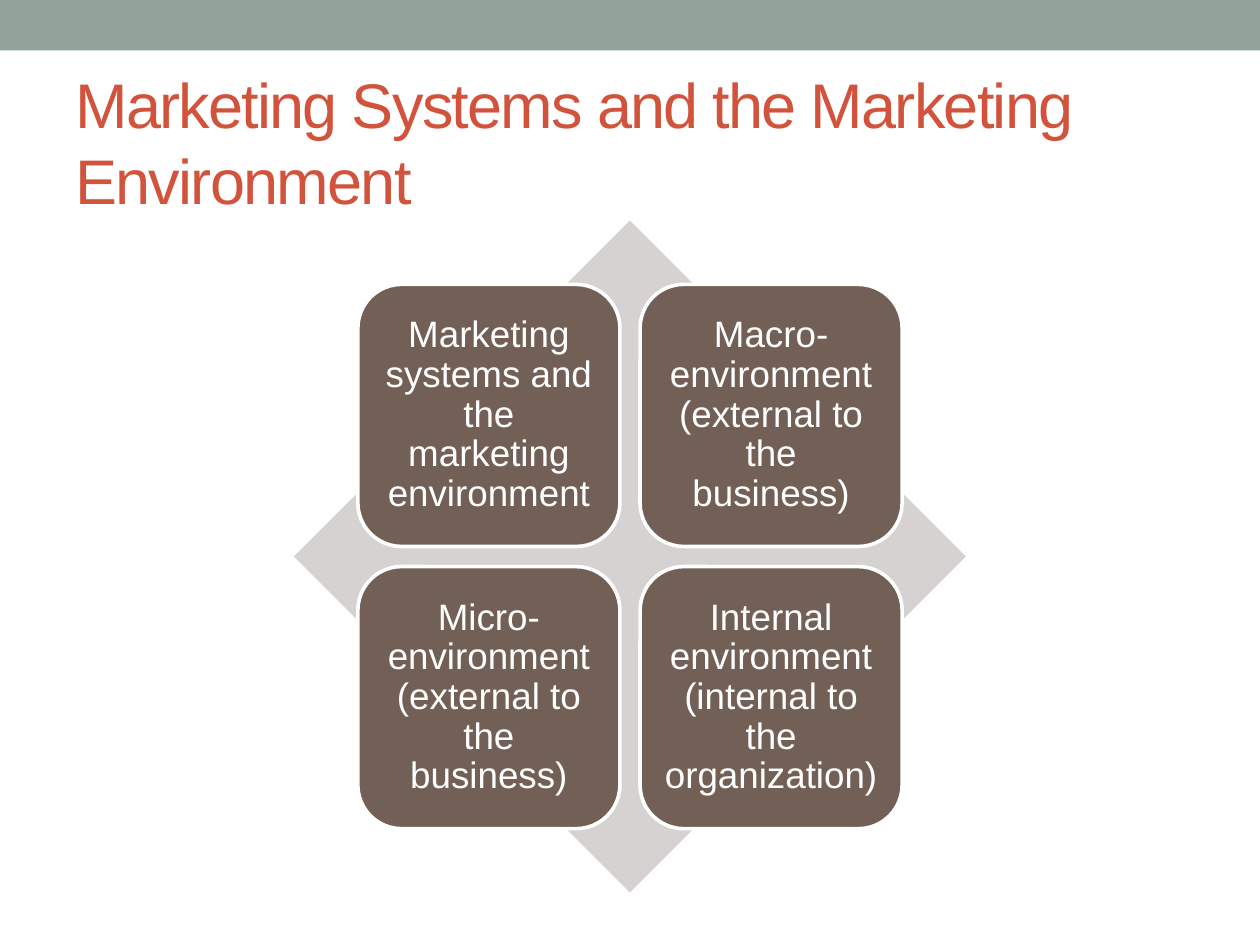
from pptx import Presentation, util as u
from pptx.dml.color import RGBColor
from pptx.enum import shapes, text

COLUMNS, ROWS = 100, 75
CENTER_X, CENTER_Y = 50, 44.17
DIAMOND_SIZE = 53.33
CARD_SIZE, CARD_GAP = 20.8, 1.6
CARDS = [
    ["Marketing systems and the marketing environment",
     "Macro-environment (external to the business)"],
    ["Micro-environment (external to the business)",
     "Internal environment (internal to the organization)"],
]


def color(hex_value):
    return RGBColor.from_string(hex_value)


class SlideBuilder:
    FONT = "Arial"
    BAND, TITLE, DIAMOND, CARD, WHITE = "93A299", "D2533C", "D5D2D1", "726056", "FFFFFF"

    def __init__(self, deck):
        self.deck = deck
        self.slide = deck.slides.add_slide(deck.slide_layouts[6])

    def place(self, column, row, columns, rows):
        """Turn grid columns and rows into slide lengths."""
        across = self.deck.slide_width / COLUMNS
        down = self.deck.slide_height / ROWS
        return [round(length) for length in
                (column * across, row * down, columns * across, rows * down)]

    def shape(self, kind, area, fill):
        shape = self.slide.shapes.add_shape(kind, *self.place(*area))
        shape.shadow.inherit = False
        shape.fill.solid()
        shape.fill.fore_color.rgb = color(fill)
        shape.line.fill.background()
        return shape

    def add_words(self, box, words, size, ink):
        frame = box.text_frame
        frame.word_wrap = True
        frame.vertical_anchor = text.MSO_ANCHOR.MIDDLE
        para = frame.paragraphs[0]
        span = para.add_run()
        span.text = words
        span.font.name = self.FONT
        span.font.size = u.Pt(size)
        span.font.color.rgb = color(ink)
        return para, span

    def title(self, words, area):
        box = self.slide.shapes.add_textbox(*self.place(*area))
        para, span = self.add_words(box, words, 36, self.TITLE)
        para.alignment = text.PP_ALIGN.LEFT
        span.font._element.set("spc", "-100")  # tighten letters by 1 pt

    def card(self, words, area):
        card = self.shape(shapes.MSO_SHAPE.ROUNDED_RECTANGLE, area, self.CARD)
        card.line.color.rgb = color(self.WHITE)
        card.line.width = u.Pt(2.08)
        frame = card.text_frame
        frame.margin_left = frame.margin_right = u.Inches(0.09)
        frame.margin_top = frame.margin_bottom = u.Inches(0.09)
        para, _ = self.add_words(card, words, 21, self.WHITE)
        para.alignment = text.PP_ALIGN.CENTER
        para.line_spacing = 0.9


def main():
    deck = Presentation()
    deck.slide_width, deck.slide_height = u.Inches(10), u.Inches(7.5)
    builder = SlideBuilder(deck)

    builder.shape(shapes.MSO_SHAPE.RECTANGLE, (0, 0, COLUMNS, 4), builder.BAND)
    builder.title("Marketing Systems and the Marketing Environment", (5, 5.8, 90, 10.8))
    builder.shape(
        shapes.MSO_SHAPE.DIAMOND,
        (CENTER_X - DIAMOND_SIZE / 2, CENTER_Y - DIAMOND_SIZE / 2, DIAMOND_SIZE, DIAMOND_SIZE),
        builder.DIAMOND)

    step = CARD_SIZE + CARD_GAP
    left = CENTER_X - CARD_GAP / 2 - CARD_SIZE
    top = CENTER_Y - CARD_GAP / 2 - CARD_SIZE
    for row, labels in enumerate(CARDS):
        for column, label in enumerate(labels):
            builder.card(label, (left + column * step, top + row * step, CARD_SIZE, CARD_SIZE))

    deck.save("out.pptx")


if __name__ == "__main__":
    main()
